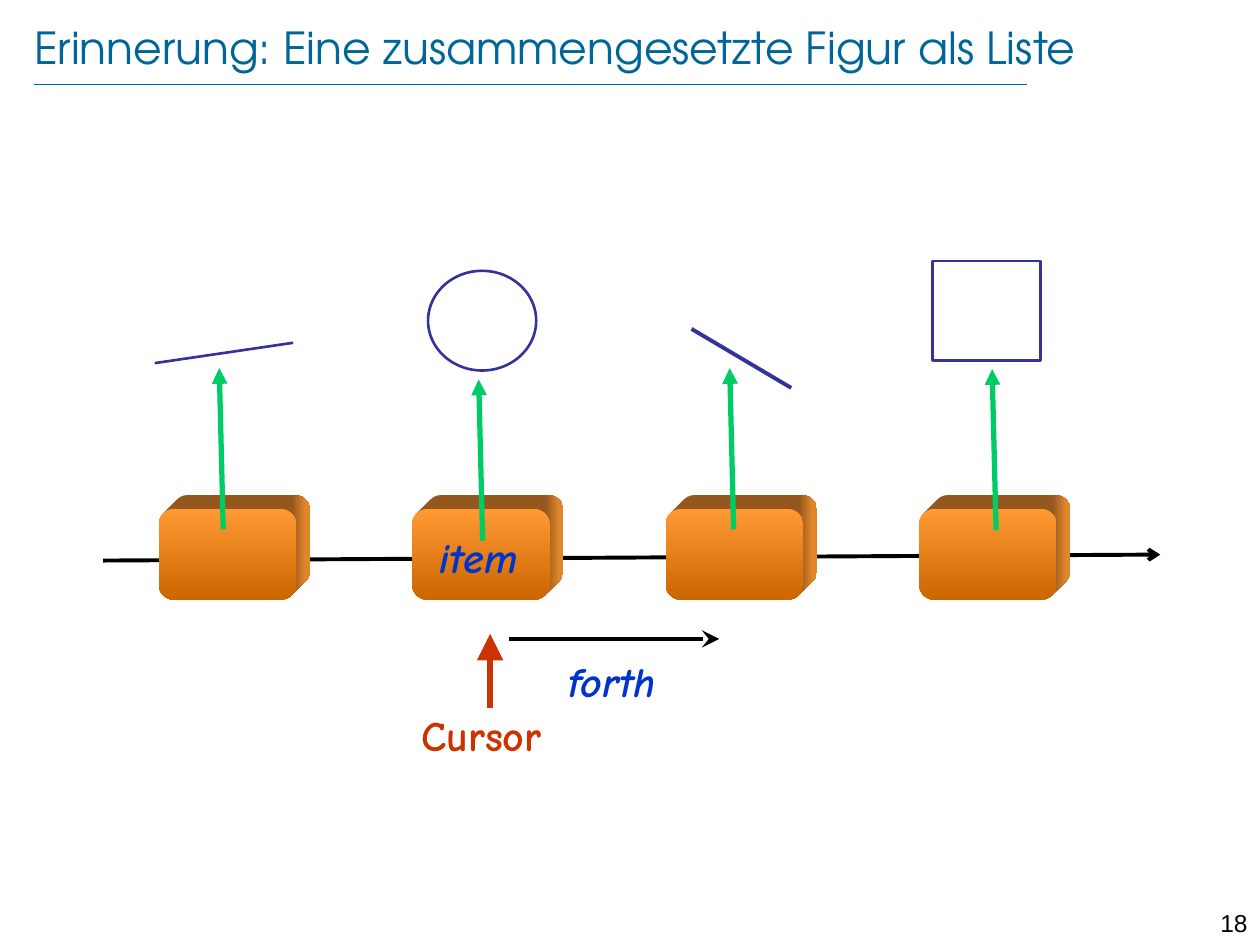
from math import cos, radians, sin

from lxml import etree
from pptx import Presentation
from pptx.dml.color import RGBColor
from pptx.enum.shapes import MSO_CONNECTOR, MSO_SHAPE
from pptx.enum.text import MSO_ANCHOR, PP_ALIGN
from pptx.oxml.ns import qn
from pptx.util import Cm, Pt

LEFT, CENTER, RIGHT = PP_ALIGN.LEFT, PP_ALIGN.CENTER, PP_ALIGN.RIGHT
TOP, MIDDLE = MSO_ANCHOR.TOP, MSO_ANCHOR.MIDDLE
STRAIGHT = MSO_CONNECTOR.STRAIGHT
ROUNDED, OVAL, RECT = MSO_SHAPE.ROUNDED_RECTANGLE, MSO_SHAPE.OVAL, MSO_SHAPE.RECTANGLE

COLORS = {
    "title": "006699", "black": "000000", "figure": "333399", "link": "00CC66",
    "cursor": "CC3300", "feature": "0033CC", "box_top": "FF9933",
    "box_bottom": "CC6600", "lid": "94571D", "side": "E0862B",
}
TITLE_FONT, LABEL_FONT, NUMBER_FONT = "TeX Gyre Adventor", "Comic Neue", "Arial"


def rgb(name):
    return RGBColor.from_string(COLORS[name])


def add_line(s, x1, y1, x2, y2, color, width, head=None, size="med"):
    line = s.shapes.add_connector(STRAIGHT, Cm(x1), Cm(y1), Cm(x2), Cm(y2))
    line.line.color.rgb = rgb(color)
    line.line.width = Pt(width)
    if head:
        etree.SubElement(line.line._get_or_add_ln(), qn("a:tailEnd"),
                         type=head, w=size, len=size)
    etree.SubElement(line._element.spPr, qn("a:effectLst"))


def add_text(s, x, y, w, h, text, font, size, color, align=CENTER,
             anchor=TOP, margins=True, bold=False, italic=False):
    tf = s.shapes.add_textbox(Cm(x), Cm(y), Cm(w), Cm(h)).text_frame
    tf.word_wrap = True
    tf.vertical_anchor = anchor
    if not margins:
        tf.margin_left = tf.margin_right = tf.margin_top = tf.margin_bottom = 0
    p = tf.paragraphs[0]
    p.alignment = align
    r = p.add_run()
    r.text = text
    r.font.name, r.font.size = font, Pt(size)
    r.font.bold, r.font.italic = bold, italic
    r.font.color.rgb = rgb(color)


def add_outline(s, kind, x, y, w, h):
    sp = s.shapes.add_shape(kind, Cm(x), Cm(y), Cm(w), Cm(h))
    sp.shadow.inherit = False
    sp.fill.background()
    sp.line.color.rgb = rgb("figure")
    sp.line.width = Pt(1.5)


def fill_gradient(sp, angle, stops):
    sp.shadow.inherit = False
    sp.line.fill.background()
    sp.fill.gradient()
    sp.fill.gradient_angle = angle
    for stop, (position, color) in zip(sp.fill.gradient_stops, stops):
        stop.position = position
        stop.color.rgb = rgb(color)


def add_block(s, x, y, w, h, depth=0.28):
    """Rounded box with an oblique depth towards the upper right."""
    radius = h / 6
    # Silhouette: each corner is left, top, depth shift, start and end angle
    corners = [(0, 1, 0, 90, 180), (0, 0, 0, 180, 225), (0, 0, 1, 225, 270),
               (1, 0, 1, 270, 360), (1, 1, 1, 0, 45), (1, 1, 0, 45, 90)]
    points = []
    for right, bottom, back, start, end in corners:
        cx = x + (w - radius if right else radius) + back * depth
        cy = y + (h - radius if bottom else radius) - back * depth
        for angle in range(start, end + 1, 15):
            a = radians(angle)
            points.append((Cm(cx + radius * cos(a)), Cm(cy + radius * sin(a))))
    builder = s.shapes.build_freeform(*points[0])
    builder.add_line_segments(points[1:])
    fill_gradient(builder.convert_to_shape(), 0, [(0.88, "lid"), (0.97, "side")])

    front = s.shapes.add_shape(ROUNDED, Cm(x), Cm(y), Cm(w), Cm(h))
    front.adjustments[0] = 0.167
    fill_gradient(front, 270, [(0, "box_top"), (1, "box_bottom")])


def add_header(s, x, y, w, h):
    add_line(s, x, y + 1.37, x + 20.02, y + 1.37, "title", 0.25)
    add_text(s, x, y, w, h, "Erinnerung: Eine zusammengesetzte Figur als Liste",
             TITLE_FONT, 25.2, "title", LEFT, MIDDLE, margins=False)


def add_list(s, x, y, w, h, pitch):
    """Four linked list cells; x, y, w, h is the front of the first one."""
    add_line(s, x - 1.12, y + 1.04, x + 20.19, y + 0.92, "black", 2.25, "arrow")
    # Start of each link, relative to its cell
    starts = [(1.3, 0.41), (1.42, 0.64), (1.37, 0.41), (1.55, 0.43)]
    for i, (dx, dy) in enumerate(starts):
        left = x + i * pitch
        add_block(s, left, y, w, h)
        add_line(s, left + dx, y + dy, left + dx - 0.08, y + dy - 3.25,
                 "link", 3, "triangle")
    add_text(s, x + pitch + 0.17, y + 0.33, 2.34, 1.27, "item", LABEL_FONT, 24,
             "feature", bold=True, italic=True)


def add_figures(s, x, y):
    """The figures above the cells, from the top left of the row."""
    add_line(s, x, y + 2.06, x + 2.79, y + 1.65, "figure", 1.5)
    add_outline(s, OVAL, x + 5.51, y + 0.2, 2.18, 2.01)
    add_line(s, x + 10.82, y + 1.37, x + 12.83, y + 2.56, "figure", 2.25)
    add_outline(s, RECT, x + 15.68, y, 2.18, 2.01)


def add_cursor(s, x, y):
    """Cursor arrow with its tip at x, y, and the step to the right."""
    add_line(s, x, y + 1.5, x, y, "cursor", 3, "triangle", "lg")
    add_text(s, x - 2.31, y + 1.4, 4.27, 1.27, "Cursor", LABEL_FONT, 24,
             "cursor", bold=True)
    add_line(s, x + 0.38, y + 0.1, x + 4.62, y + 0.1, "black", 2, "stealth", "lg")
    add_text(s, x + 0.58, y + 0.3, 3.76, 1.27, "forth", LABEL_FONT, 24,
             "feature", bold=True, italic=True)


def main():
    prs = Presentation()
    prs.slide_width, prs.slide_height = Cm(25.4), Cm(19.05)
    s = prs.slides.add_slide(prs.slide_layouts[6])
    add_header(s, 0.69, 0.33, 23.14, 1.22)
    add_list(s, 3.2, 10.26, 2.77, 1.83, pitch=5.11)
    add_figures(s, 3.12, 5.26)
    add_cursor(s, 9.88, 12.78)
    # Page number
    add_text(s, 24, 18.19, 1.4, 0.61, "18", NUMBER_FONT, 14, "black", RIGHT)
    prs.save("out.pptx")


if __name__ == "__main__":
    main()
